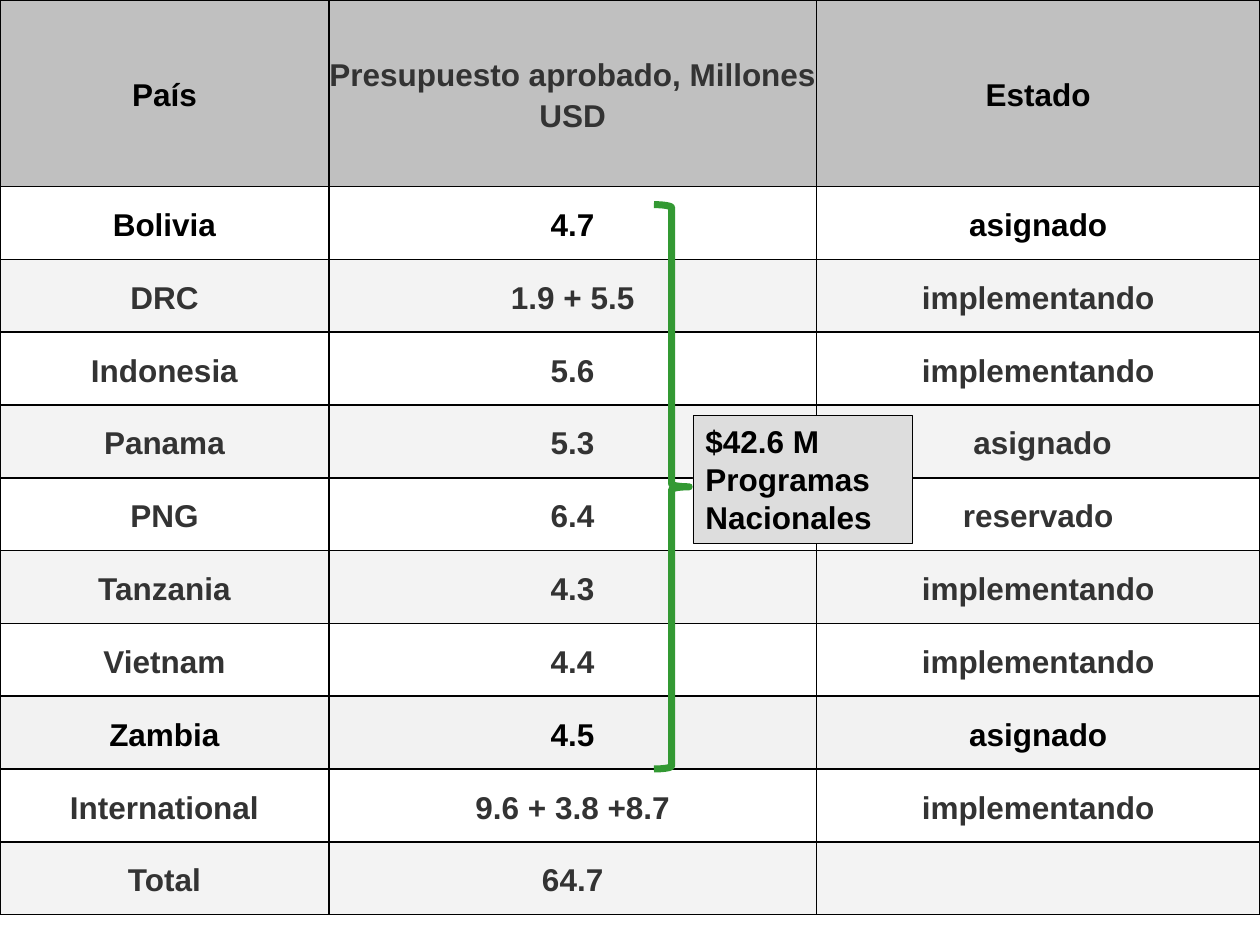
from typing import NamedTuple

from lxml.etree import SubElement
from pptx import Presentation
from pptx.dml.color import RGBColor
from pptx.enum.shapes import MSO_SHAPE as Shape
from pptx.enum.text import MSO_ANCHOR as Anchor, MSO_AUTO_SIZE as AutoSize, PP_ALIGN as Align
from pptx.oxml.ns import qn
from pptx.util import Inches, Pt

BLACK, GRAY = "000000", "333333"
HEAD, WHITE, BAND, BAND_ZAMBIA = "C0C0C0", "FFFFFF", "F3F3F3", "F2F2F2"
SLIDE_W, SLIDE_H = 10, 7.5
COL_W = (2.61, 3.87, 3.52)
HEAD_H, TABLE_H = 1.48, 7.26


class Row(NamedTuple):
    country: str
    budget: str
    status: str
    fill: str
    colors: tuple = (GRAY, GRAY, GRAY)


ALL_BLACK = (BLACK,) * 3
ROWS = [
    Row("País", "Presupuesto aprobado, Millones USD", "Estado", HEAD, (BLACK, GRAY, BLACK)),
    Row("Bolivia", "4.7", "asignado", WHITE, ALL_BLACK),
    Row("DRC", "1.9 + 5.5", "implementando", BAND),
    Row("Indonesia", "5.6", "implementando", WHITE),
    Row("Panama", "5.3", " asignado", BAND),
    Row("PNG", "6.4", "reservado", WHITE),
    Row("Tanzania", "4.3", "implementando", BAND),
    Row("Vietnam", "4.4", "implementando", WHITE),
    Row("Zambia", "4.5", "asignado", BAND_ZAMBIA, ALL_BLACK),
    Row("International", "9.6 + 3.8 +8.7", "implementando", WHITE),
    Row("Total", "64.7", "", BAND),
]
ROW_H = (TABLE_H - HEAD_H) / (len(ROWS) - 1)


def rgb(color: str) -> RGBColor:
    return RGBColor.from_string(color)


def write(tf, text: str, *, color=BLACK, size=18, bold=True, align=Align.LEFT, spacing=1.0) -> None:
    p = tf.paragraphs[0]
    p.alignment, p.line_spacing = align, spacing
    r = p.add_run()
    r.text = text
    r.font.name, r.font.size, r.font.bold = "Arial", Pt(size), bold
    r.font.color.rgb = rgb(color)


def set_borders(cell, color: str, width: float) -> None:
    tc_pr = cell._tc.get_or_add_tcPr()
    for side in ("lnL", "lnR", "lnT", "lnB"):
        ln = SubElement(tc_pr, qn(f"a:{side}"), w=str(Pt(width)))
        SubElement(SubElement(ln, qn("a:solidFill")), qn("a:srgbClr"), val=color)


def draw_table(s, rows: list[Row]) -> None:
    frame = s.shapes.add_table(len(rows), len(COL_W), 0, 0, Inches(SLIDE_W), Inches(TABLE_H))
    table = frame.table
    table.first_row = table.horz_banding = False
    for col, width in zip(table.columns, COL_W):
        col.width = Inches(width)
    for i, row in enumerate(rows):
        table.rows[i].height = Inches(ROW_H if i else HEAD_H)
        for j, (text, color) in enumerate(zip(row[:3], row.colors)):
            cell = table.cell(i, j)
            cell.margin_left = cell.margin_right = cell.margin_top = cell.margin_bottom = 0
            cell.vertical_anchor = Anchor.MIDDLE
            set_borders(cell, BLACK, 1)
            cell.fill.solid()
            cell.fill.fore_color.rgb = rgb(row.fill)
            if text:
                write(cell.text_frame, text, color=color, align=Align.CENTER, spacing=1.15)


def draw_shape(s, kind, box: tuple, *, line: str, width: float, fill=None):
    sp = s.shapes.add_shape(kind, *(Inches(v) for v in box))
    sp.shadow.inherit = False
    sp.line.color.rgb, sp.line.width = rgb(line), Pt(width)
    if fill:
        sp.fill.solid()
        sp.fill.fore_color.rgb = rgb(fill)
    else:
        sp.fill.background()
    return sp


def main() -> None:
    prs = Presentation()
    prs.slide_width, prs.slide_height = Inches(SLIDE_W), Inches(SLIDE_H)
    s = prs.slides.add_slide(prs.slide_layouts[6])

    # Budget table
    draw_table(s, ROWS)

    # Brace spanning Bolivia to Zambia
    brace_top, brace_bottom = HEAD_H + 0.25 * ROW_H, HEAD_H + 8 * ROW_H
    draw_shape(s, Shape.RIGHT_BRACE, (5.19, brace_top, 0.28, brace_bottom - brace_top),
               line="339933", width=4)

    # Subtotal label
    label = draw_shape(s, Shape.RECTANGLE, (5.5, 3.3, 1.74, 1.01),
                       line=BLACK, width=0.5, fill="DDDDDD")
    tf = label.text_frame
    tf.word_wrap, tf.auto_size = True, AutoSize.SHAPE_TO_FIT_TEXT
    tf.vertical_anchor = Anchor.TOP
    write(tf, "$42.6 M Programas Nacionales")

    prs.save("out.pptx")


if __name__ == "__main__":
    main()
